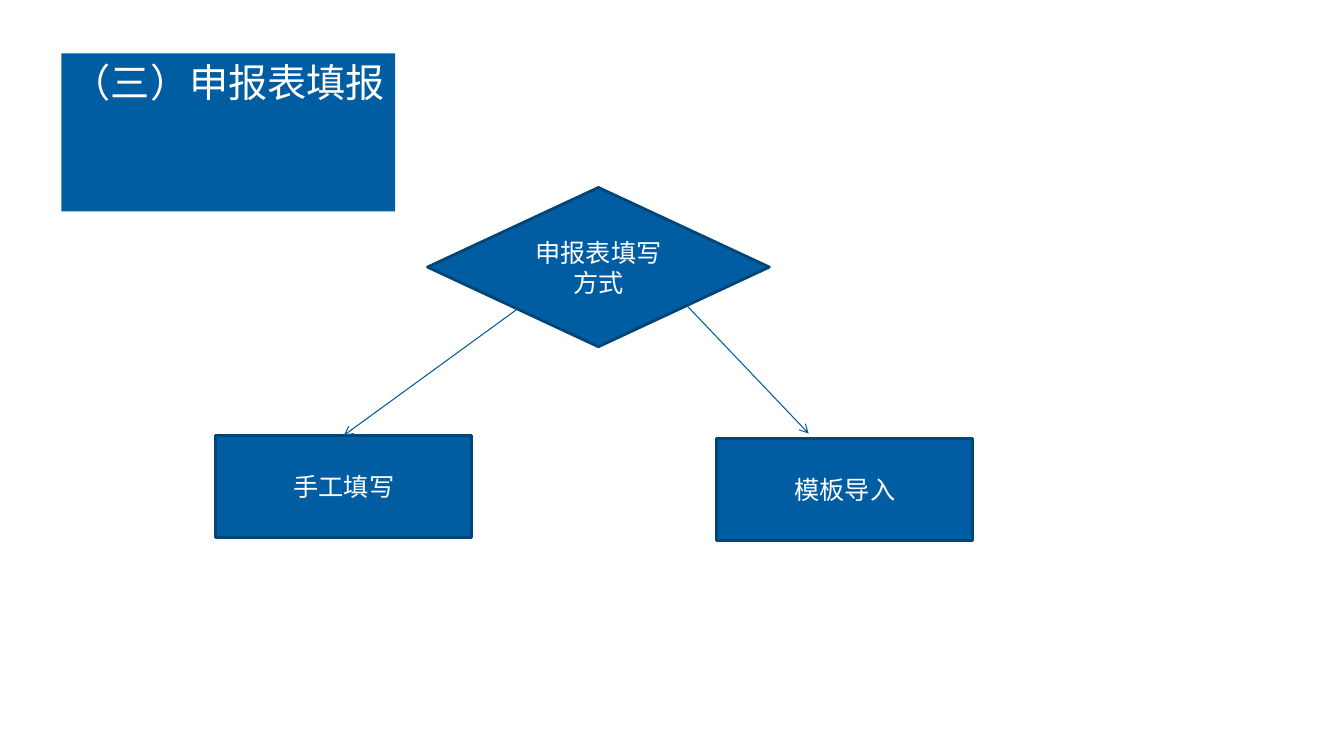
from lxml.etree import SubElement
from pptx import Presentation
from pptx.dml.color import RGBColor
from pptx.enum.shapes import MSO_CONNECTOR, MSO_SHAPE
from pptx.enum.text import MSO_ANCHOR, MSO_AUTO_SIZE, PP_ALIGN
from pptx.oxml.ns import qn
from pptx.util import Inches, Pt

BLUE = RGBColor(0x00, 0x5D, 0xA2)
NAVY = RGBColor(0x00, 0x45, 0x78)
ARROW_BLUE = RGBColor(0x00, 0x5B, 0x9E)
WHITE = RGBColor(0xFF, 0xFF, 0xFF)
CJK_FONT, BODY_FONT = "Noto Sans CJK SC", "Calibri"

HEADING = "（三）申报表填报"
HEADING_AREA = (0.61, 0.53, 3.31, 0.57)
MANUAL = ("手工填写", MSO_SHAPE.RECTANGLE, (2.14, 4.32, 2.54, 1.01))
DECISION = ("申报表填写方式", MSO_SHAPE.FLOWCHART_DECISION, (4.24, 1.86, 3.39, 1.58))
TEMPLATE = ("模板导入", MSO_SHAPE.RECTANGLE, (7.11, 4.35, 2.54, 1.01))
TO_TEMPLATE = (6.82, 3.04, 8.02, 4.3)
TO_MANUAL = (5.14, 3.06, 3.41, 4.32)


def write(frame, text, size, font_name):
    """Write one centred white line of text."""
    paragraph = frame.paragraphs[0]
    paragraph.alignment = PP_ALIGN.CENTER
    run = paragraph.add_run()
    run.text = text
    run.font.size = Pt(size)
    run.font.color.rgb = WHITE
    run.font.name = font_name
    if font_name == CJK_FONT:
        SubElement(run.font._element, qn("a:ea"), typeface=font_name)


def add_heading(slide):
    """Place the title on its blue band."""
    heading = slide.shapes.title
    heading.left, heading.top, heading.width, heading.height = map(Inches, HEADING_AREA)
    heading.fill.solid()
    heading.fill.fore_color.rgb = BLUE
    frame = heading.text_frame
    frame.word_wrap = False
    frame.auto_size = MSO_AUTO_SIZE.SHAPE_TO_FIT_TEXT
    frame.vertical_anchor = MSO_ANCHOR.TOP
    write(frame, HEADING, 28, CJK_FONT)


def add_step(slide, label, outline, area):
    """Add one labelled step of the flow."""
    step = slide.shapes.add_shape(outline, *map(Inches, area))
    step.shadow.inherit = False
    step.fill.solid()
    step.fill.fore_color.rgb = BLUE
    step.line.color.rgb = NAVY
    step.line.width = Pt(2)
    step.text_frame.word_wrap = True
    step.text_frame.vertical_anchor = MSO_ANCHOR.MIDDLE
    write(step.text_frame, label, 18, BODY_FONT)
    return step


def add_arrow(slide, ends):
    """Add a thin arrow with an open head."""
    arrow = slide.shapes.add_connector(MSO_CONNECTOR.STRAIGHT, *map(Inches, ends))
    arrow.line.color.rgb = ARROW_BLUE
    arrow.line.width = Pt(0.75)
    SubElement(arrow.line._get_or_add_ln(), qn("a:tailEnd"), type="arrow")
    SubElement(arrow._element.spPr, qn("a:effectLst"))
    return arrow


def main():
    """Build the slide and save it."""
    deck = Presentation()
    deck.slide_width, deck.slide_height = Inches(13.33), Inches(7.5)
    slide = deck.slides.add_slide(deck.slide_layouts[5])
    add_heading(slide)
    manual, decision, template = [
        add_step(slide, *step) for step in (MANUAL, DECISION, TEMPLATE)
    ]
    add_arrow(slide, TO_TEMPLATE)
    add_arrow(slide, TO_MANUAL).end_connect(manual, 0)
    deck.save("out.pptx")


if __name__ == "__main__":
    main()
